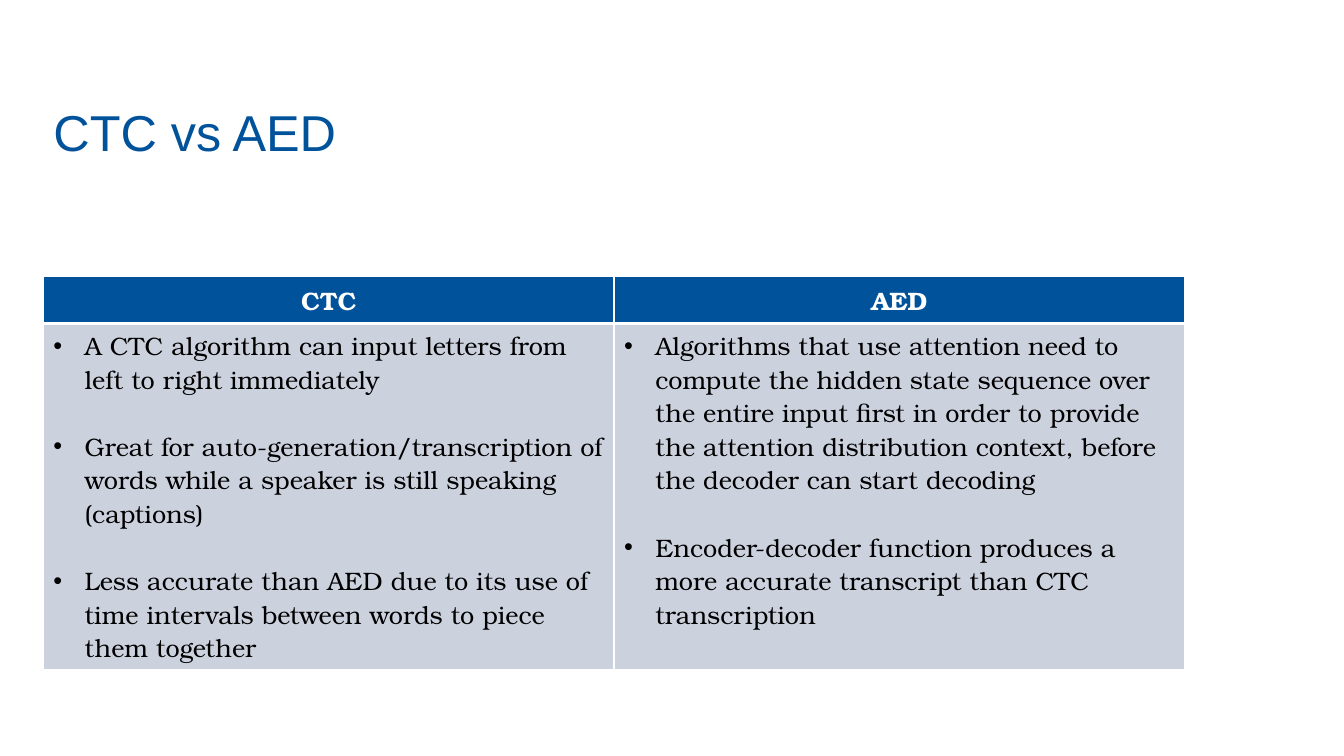
from lxml import etree
from pptx import Presentation
from pptx import util as u
from pptx.dml.color import RGBColor
from pptx.enum import text
from pptx.oxml import ns

BLUE, PALE, WHITE, BLACK = "00529B", "CCD1DE", "FFFFFF", "000000"
LEFT, COL_W = 0.43, 5.66
ROW_H = [0.47, 3.43]
INDENT = u.Inches(0.31)

COLUMNS = {
    "CTC": [
        "A CTC algorithm can input letters from left to right immediately",
        "Great for auto-generation/transcription of words while a speaker is still speaking (captions)",
        "Less accurate than AED due to its use of time intervals between words to piece them together",
    ],
    "AED": [
        "Algorithms that use attention need to compute the hidden state sequence over the entire input "
        "first in order to provide the attention distribution context, before the decoder can start decoding",
        "Encoder-decoder function produces a more accurate transcript than CTC transcription",
    ],
}


def rgb(color):
    return RGBColor.from_string(color)


def style_cell(cell, fill, widths):
    """Draw white borders of the given widths, then fill the cell."""
    tc_pr = cell._tc.get_or_add_tcPr()
    for side, width in widths.items():
        ln = etree.SubElement(tc_pr, ns.qn("a:ln" + side), w=str(u.Pt(width)))
        solid = etree.SubElement(ln, ns.qn("a:solidFill"))
        etree.SubElement(solid, ns.qn("a:srgbClr"), val=WHITE)
    cell.fill.solid()
    cell.fill.fore_color.rgb = rgb(fill)


prs = Presentation()
prs.slide_width, prs.slide_height = u.Inches(13.33), u.Inches(7.5)
s = prs.slides.add_slide(prs.slide_layouts[5])

# Title
title = s.shapes.title
title.left, title.top = u.Inches(LEFT), u.Inches(0.95)
title.width, title.height = u.Inches(11.02), u.Inches(1.22)
tf = title.text_frame
tf.text = "CTC vs AED"
tf.vertical_anchor = text.MSO_ANCHOR.TOP
p = tf.paragraphs[0]
p.alignment = text.PP_ALIGN.LEFT
f = p.runs[0].font
f.name, f.size, f.color.rgb = "Arial", u.Pt(36), rgb(BLUE)

# Comparison table
table = s.shapes.add_table(
    len(ROW_H), len(COLUMNS), u.Inches(LEFT), u.Inches(2.74),
    u.Inches(COL_W * len(COLUMNS)), u.Inches(sum(ROW_H))).table
for row, height in zip(table.rows, ROW_H):
    row.height = u.Inches(height)

for col, (heading, points) in enumerate(COLUMNS.items()):
    table.columns[col].width = u.Inches(COL_W)
    head, body = table.cell(0, col), table.cell(1, col)
    style_cell(head, BLUE, {"L": 1, "R": 1, "T": 1, "B": 3})
    style_cell(body, PALE, {"L": 1, "R": 1, "T": 3, "B": 1})
    head.text_frame.text = heading
    body.text_frame.text = "\n".join(points)
    head.text_frame.paragraphs[0].alignment = text.PP_ALIGN.CENTER

    # Bullets, one line apart
    for i, p in enumerate(body.text_frame.paragraphs):
        p_pr = p._p.get_or_add_pPr()
        p_pr.set("marL", str(INDENT))
        p_pr.set("indent", str(-INDENT))
        if i:
            p.space_before = u.Pt(24)
        etree.SubElement(p_pr, ns.qn("a:buFont"), typeface="Arial")
        etree.SubElement(p_pr, ns.qn("a:buChar"), char="•")

    # Fonts
    for cell, color, bold in ((head, WHITE, True), (body, BLACK, False)):
        for p in cell.text_frame.paragraphs:
            f = p.runs[0].font
            f.name, f.size, f.bold = "TeX Gyre Bonum", u.Pt(18), bold
            f.color.rgb = rgb(color)

prs.save("out.pptx")
